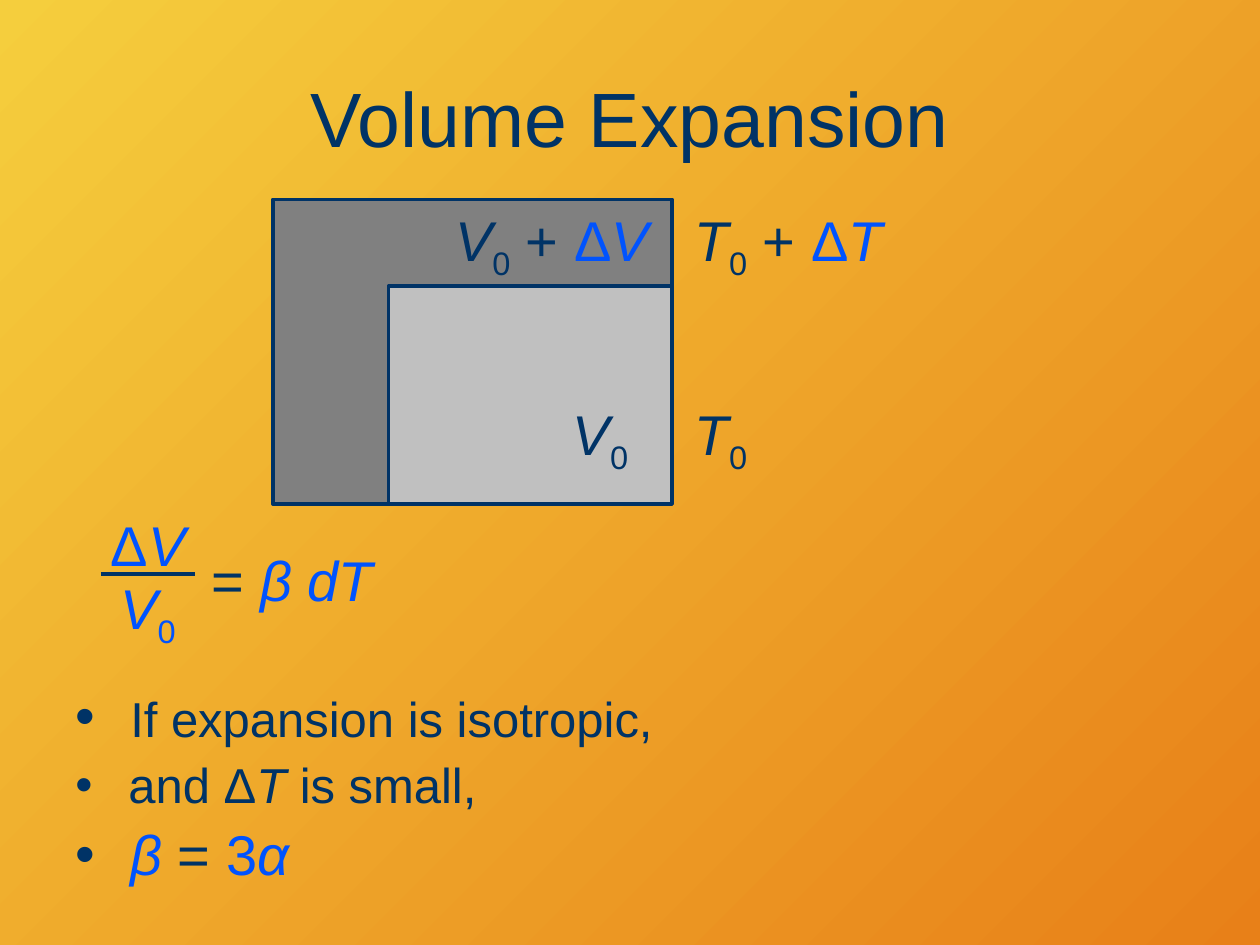
from dataclasses import dataclass

from lxml.etree import SubElement
from pptx import Presentation
from pptx.dml.color import RGBColor
from pptx.enum.shapes import MSO_CONNECTOR, MSO_SHAPE
from pptx.enum.text import MSO_ANCHOR, PP_ALIGN
from pptx.oxml.ns import qn
from pptx.util import Pt


@dataclass(frozen=True)
class Theme:
    font: str = "Arial"
    ink: str = "003366"
    accent: str = "0053FE"
    expanded: str = "808080"
    initial: str = "C0C0C0"
    glow: str = "F5CE3D"
    ember: str = "E88018"
    title_size: float = 44
    formula_size: float = 32
    body_size: float = 28
    line_width: float = 2.25


THEME = Theme()


@dataclass(frozen=True)
class Span:
    text: str
    size: float
    color: str
    italic: bool
    subscript: bool


def span(text, size=THEME.formula_size, color=THEME.ink, italic=False, subscript=False):
    return Span(text, size, color, italic, subscript)


def indexed(letter, color=THEME.ink):
    """An italic quantity with the subscript 0."""
    return [span(letter, color=color, italic=True), span("0", color=color, subscript=True)]


def change(letter, color=THEME.accent, size=THEME.formula_size):
    """A delta followed by an italic quantity."""
    return [span("Δ", size, color), span(letter, size, color, italic=True)]


class SlideBuilder:
    def __init__(self, deck, theme):
        self.theme = theme
        self.slide = deck.slides.add_slide(deck.slide_layouts[6])

    def background(self):
        fill = self.slide.background.fill
        fill.gradient()
        fill.gradient_angle = 315
        for stop, color in zip(fill.gradient_stops, (self.theme.glow, self.theme.ember)):
            stop.color.rgb = RGBColor.from_string(color)

    def style_line(self, line):
        line.color.rgb = RGBColor.from_string(self.theme.ink)
        line.width = Pt(self.theme.line_width)

    def rectangle(self, left, top, width, height, color):
        box = self.slide.shapes.add_shape(
            MSO_SHAPE.RECTANGLE, Pt(left), Pt(top), Pt(width), Pt(height))
        box.shadow.inherit = False
        box.fill.solid()
        box.fill.fore_color.rgb = RGBColor.from_string(color)
        self.style_line(box.line)

    def rule(self, left, right, y):
        """A horizontal line."""
        line = self.slide.shapes.add_connector(
            MSO_CONNECTOR.STRAIGHT, Pt(left), Pt(y), Pt(right), Pt(y))
        self.style_line(line.line)
        SubElement(line._element.spPr, qn("a:effectLst"))

    def add_spans(self, para, spans):
        for item in spans:
            run = para.add_run()
            run.text = item.text
            run.font.name = self.theme.font
            run.font.size = Pt(item.size)
            run.font.italic = item.italic
            run.font.color.rgb = RGBColor.from_string(item.color)
            if item.subscript:
                run._r.get_or_add_rPr().set("baseline", "-25000")

    def text(self, left, top, width, height, spans,
             align=PP_ALIGN.LEFT, anchor=MSO_ANCHOR.TOP):
        box = self.slide.shapes.add_textbox(Pt(left), Pt(top), Pt(width), Pt(height))
        frame = box.text_frame
        frame.word_wrap = True
        frame.vertical_anchor = anchor
        frame.paragraphs[0].alignment = align
        self.add_spans(frame.paragraphs[0], spans)
        return frame

    def bullets(self, left, top, width, height, items):
        frame = self.text(left, top, width, height, items[0])
        for spans in items[1:]:
            self.add_spans(frame.add_paragraph(), spans)
        for para in frame.paragraphs:
            para.line_spacing = 0.9
            para.space_before = Pt(7)
            properties = para._p.get_or_add_pPr()
            properties.set("marL", str(Pt(22.5)))
            properties.set("indent", str(Pt(-22.5)))
            SubElement(properties, qn("a:buFont"), typeface=self.theme.font)
            SubElement(properties, qn("a:buChar"), char="•")


def main():
    deck = Presentation()
    deck.slide_width, deck.slide_height = Pt(720), Pt(540)
    page = SlideBuilder(deck, THEME)
    page.background()

    page.text(36, 21.6, 648, 90, [span("Volume Expansion", THEME.title_size)],
              align=PP_ALIGN.CENTER, anchor=MSO_ANCHOR.MIDDLE)

    # Both volumes share the lower right corner
    right, bottom = 384, 288
    for width, height, color in ((228, 174, THEME.expanded), (162, 124.5, THEME.initial)):
        page.rectangle(right - width, bottom - height, width, height, color)

    row = 45.4
    plus = span(" + ")
    page.text(246, 114, 132, row, [*indexed("V"), plus, *change("V ")], align=PP_ALIGN.RIGHT)
    page.text(390, 114, 132, row, [*indexed("T"), plus, *change("T")])
    page.text(317, 224.6, 49, row, indexed("V"), align=PP_ALIGN.RIGHT)
    page.text(390, 224.6, 49, row, indexed("T"))

    page.text(60, 324, 49, row, indexed("V", THEME.accent), align=PP_ALIGN.CENTER)
    page.text(54, 288, 61.2, row, change("V"), align=PP_ALIGN.CENTER)
    page.text(114, 308, 120, row, [span("= "), span("β dT", color=THEME.accent, italic=True)])
    page.rule(57.6, 111.6, 328.2)

    small = THEME.body_size
    page.bullets(36, 390, 648, 126, [
        [span(" "), span("If expansion is isotropic,", small)],
        [span(" and ", small), *change("T", THEME.ink, small), span(" is small,", small)],
        [span(" "), span("β", color=THEME.accent, italic=True), span(" = "),
         span("3", color=THEME.accent), span("α", color=THEME.accent, italic=True)],
    ])
    deck.save("out.pptx")


if __name__ == "__main__":
    main()
